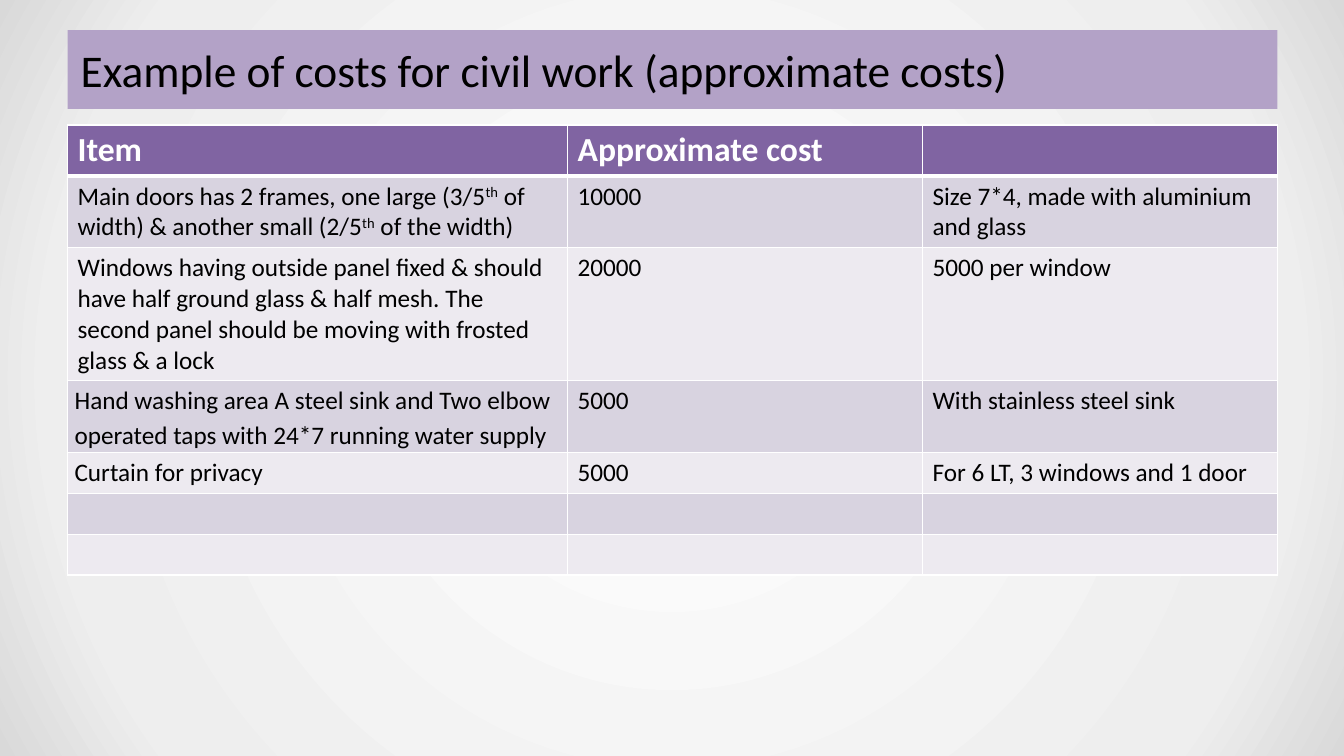
from dataclasses import dataclass

from lxml.etree import SubElement
from pptx import Presentation
from pptx.dml.color import RGBColor
from pptx.enum.shapes import MSO_SHAPE
from pptx.enum.text import MSO_ANCHOR, PP_ALIGN
from pptx.oxml.ns import qn
from pptx.util import Inches, Pt

FONT = "Calibri"
BLACK, WHITE = "000000", "FFFFFF"
LILAC, PURPLE = "B3A2C7", "8064A2"
BANDS = ("D8D3E0", "EDEAF0")
BACKDROP = ((0, "FFFFFF"), (81, "EEEEEE"), (100, "D9D9D9"))
LEFT, WIDTH = 0.67, 12
COLUMN_WIDTHS = (4.96, 3.52, 3.52)


@dataclass(frozen=True)
class CostRow:
    height: float
    item: str = ""  # "^" switches superscript on and off
    cost: str = ""
    remark: str = ""
    tight: bool = False  # item cell with small margins and wider lines


ROWS = (
    CostRow(0.5, "Item", "Approximate cost"),
    CostRow(0.71, "Main doors has 2 frames, one large (3/5^th^ of width) "
            "& another small (2/5^th^ of the width)",
            "10000", "Size 7*4, made with aluminium and glass"),
    CostRow(1.32, "Windows having outside panel fixed & should have half ground "
            "glass & half mesh. The second panel should be moving with "
            "frosted glass & a lock", "20000", "5000 per window"),
    CostRow(0.71, "Hand washing area A steel sink and Two elbow operated taps "
            "with 24*7 running water supply",
            "5000", "With stainless steel sink", tight=True),
    CostRow(0.4, "Curtain for privacy", "5000",
            "For 6 LT, 3 windows and 1 door", tight=True),
    CostRow(0.4),
    CostRow(0.4),
)


def color(value: str) -> RGBColor:
    return RGBColor.from_string(value)


def paint_backdrop(page) -> None:
    """Fill the page with a gradient that spreads from its centre."""
    page.background.fill.gradient()
    gradient = page._element.find(".//" + qn("a:gradFill"))
    for child in list(gradient):
        gradient.remove(child)
    stops = SubElement(gradient, qn("a:gsLst"))
    for percent, value in BACKDROP:
        stop = SubElement(stops, qn("a:gs"), pos=str(percent * 1000))
        SubElement(stop, qn("a:srgbClr"), val=value)
    circle = SubElement(gradient, qn("a:path"), path="circle")
    SubElement(circle, qn("a:fillToRect"),
               {side: "50000" for side in ("l", "t", "r", "b")})


def write(para, text: str, size: float, ink: str, bold: bool = False) -> None:
    para.font.name = FONT
    para.font.size = Pt(size)
    para.font.bold = bold
    para.font.color.rgb = color(ink)
    for index, part in enumerate(text.split("^")):
        if part:
            span = para.add_run()
            span.text = part
            if index % 2:
                span._r.get_or_add_rPr().set("baseline", "30000")


def add_title(page, text: str) -> None:
    box = page.shapes.add_shape(MSO_SHAPE.RECTANGLE, Inches(LEFT), Inches(0.3),
                                Inches(WIDTH), Inches(0.78))
    box.shadow.inherit = False
    box.fill.solid()
    box.fill.fore_color.rgb = color(LILAC)
    box.line.fill.background()
    frame = box.text_frame
    frame.word_wrap = True
    frame.vertical_anchor = MSO_ANCHOR.MIDDLE
    frame.margin_left = frame.margin_right = Inches(0.13)
    frame.paragraphs[0].alignment = PP_ALIGN.LEFT
    write(frame.paragraphs[0], text, 32.4, BLACK)


def set_borders(cell, top: float, bottom: float) -> None:
    properties = cell._tc.get_or_add_tcPr()
    for side, points in (("L", 1), ("R", 1), ("T", top), ("B", bottom)):
        line = SubElement(properties, qn(f"a:ln{side}"), w=str(Pt(points)))
        fill = SubElement(line, qn("a:solidFill"))
        SubElement(fill, qn("a:srgbClr"), val=WHITE)


def add_cost_table(page) -> None:
    height = sum(row.height for row in ROWS)
    table = page.shapes.add_table(len(ROWS), len(COLUMN_WIDTHS), Inches(LEFT),
                                  Inches(1.24), Inches(WIDTH), Inches(height)).table
    for column, width in zip(table.columns, COLUMN_WIDTHS):
        column.width = Inches(width)
    for number, row in enumerate(ROWS):
        table.rows[number].height = Inches(row.height)
        header = number == 0
        for place, text in enumerate((row.item, row.cost, row.remark)):
            cell = table.cell(number, place)
            # The rule under the header is thicker than the others
            set_borders(cell, top=3 if number == 1 else 1, bottom=3 if header else 1)
            cell.fill.solid()
            cell.fill.fore_color.rgb = color(PURPLE if header else BANDS[(number - 1) % 2])
            para = cell.text_frame.paragraphs[0]
            if row.tight and place == 0:
                cell.margin_left = cell.margin_right = Inches(0.07)
                cell.margin_top = cell.margin_bottom = 0
                para.line_spacing = 1.15
            write(para, text, 24 if header else 18, WHITE if header else BLACK, header)


def main() -> None:
    deck = Presentation()
    deck.slide_width, deck.slide_height = Inches(13.33), Inches(7.5)
    page = deck.slides.add_slide(deck.slide_layouts[6])
    paint_backdrop(page)
    add_title(page, "Example of costs for civil work (approximate costs)")
    add_cost_table(page)
    deck.save("out.pptx")


if __name__ == "__main__":
    main()
